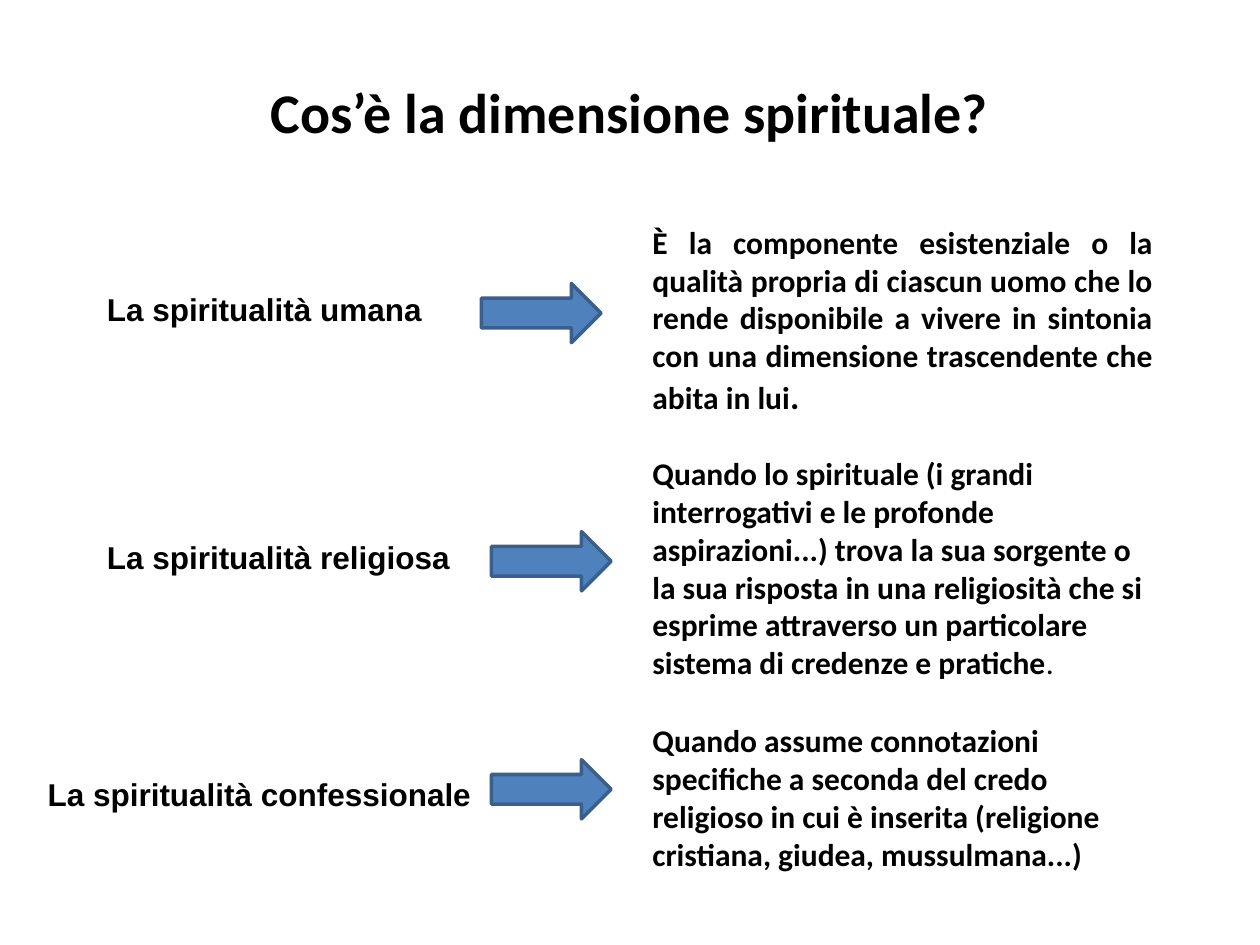
"""Build a slide that explains three kinds of spirituality."""
from pptx import Presentation
from pptx.dml.color import RGBColor
from pptx.enum.shapes import MSO_SHAPE
from pptx.enum.text import MSO_ANCHOR, MSO_AUTO_SIZE, PP_ALIGN
from pptx.util import Inches, Pt

BLACK = RGBColor(0x00, 0x00, 0x00)
ARROW_FILL = RGBColor(0x4F, 0x81, 0xBD)
ARROW_LINE = RGBColor(0x3A, 0x5F, 0x8C)

LABEL_HEIGHT = 0.4
ARROW_WIDTH, ARROW_HEIGHT = 0.95, 0.47
DEFINITION_LEFT, DEFINITION_WIDTH = 5.08, 4.17

KINDS = [
    {
        "label": ("La spiritualità umana", 0.75, 2.25, 2.84),
        "arrow": (3.82, 2.25),
        "top": 1.71,
        "height": 1.65,
        "align": PP_ALIGN.JUSTIFY,
        "runs": [
            ("È la componente esistenziale o la qualità propria di ciascun uomo "
             "che lo rende disponibile a vivere in sintonia con una dimensione "
             "trascendente che abita in lui", {}),
            (".", {"size": Pt(20)}),
        ],
    },
    {
        "label": ("La spiritualità religiosa", 0.75, 4.22, 3.15),
        "arrow": (3.9, 4.22),
        "top": 3.53,
        "height": 1.95,
        "align": PP_ALIGN.LEFT,
        "runs": [
            ("Quando lo spirituale (i grandi interrogativi e le profonde "
             "aspirazioni...) trova la sua sorgente o la sua risposta in una "
             "religiosità che si esprime attraverso un particolare sistema di "
             "credenze e pratiche", {}),
            (".", {"bold": False}),
        ],
    },
    {
        "label": ("La spiritualità confessionale", 0.28, 6.1, 3.7),
        "arrow": (3.9, 6.03),
        "top": 5.67,
        "height": 1.31,
        "align": PP_ALIGN.LEFT,
        "runs": [
            ("Quando assume connotazioni specifiche a seconda del credo religioso "
             "in cui è inserita (religione cristiana, giudea, mussulmana...)", {}),
        ],
    },
]


def add_text(slide, position, runs, font_name, size=18, align=PP_ALIGN.LEFT,
             anchor=MSO_ANCHOR.MIDDLE, wrap=True):
    """Add a text box with one paragraph of bold runs."""
    shape = slide.shapes.add_textbox(*map(Inches, position))
    frame_format = {"word_wrap": wrap, "auto_size": MSO_AUTO_SIZE.NONE,
                    "vertical_anchor": anchor}
    for name, value in frame_format.items():
        setattr(shape.text_frame, name, value)
    paragraph = shape.text_frame.paragraphs[0]
    paragraph.alignment = align
    for text, changes in runs:
        run = paragraph.add_run()
        run.text = text
        run.font.color.rgb = BLACK
        font_format = {"name": font_name, "size": Pt(size), "bold": True, **changes}
        for name, value in font_format.items():
            setattr(run.font, name, value)


def add_label(slide, text, left, top, width):
    """Add the name of a kind of spirituality."""
    add_text(slide, (left, top, width, LABEL_HEIGHT), [(text, {})], "Arial",
             anchor=MSO_ANCHOR.TOP, wrap=False)


def add_arrow(slide, left, top):
    """Add a block arrow that points from a label to its definition."""
    position = (left, top, ARROW_WIDTH, ARROW_HEIGHT)
    shape = slide.shapes.add_shape(MSO_SHAPE.RIGHT_ARROW, *map(Inches, position))
    shape.shadow.inherit = False
    shape.fill.solid()
    shape.fill.fore_color.rgb = ARROW_FILL
    shape.line.color.rgb = ARROW_LINE
    shape.line.width = Pt(2)


def main():
    """Build and save the presentation."""
    presentation = Presentation()
    presentation.slide_width = Inches(10)
    presentation.slide_height = Inches(7.5)
    slide = presentation.slides.add_slide(presentation.slide_layouts[6])
    add_text(slide, (0.5, 0.3, 9, 1.17), [("Cos’è la dimensione spirituale?", {})],
             "Calibri", size=32, align=PP_ALIGN.CENTER)
    for kind in KINDS:
        add_label(slide, *kind["label"])
        add_arrow(slide, *kind["arrow"])
        position = (DEFINITION_LEFT, kind["top"], DEFINITION_WIDTH, kind["height"])
        add_text(slide, position, kind["runs"], "Calibri", align=kind["align"])
    presentation.save("out.pptx")


if __name__ == "__main__":
    main()
